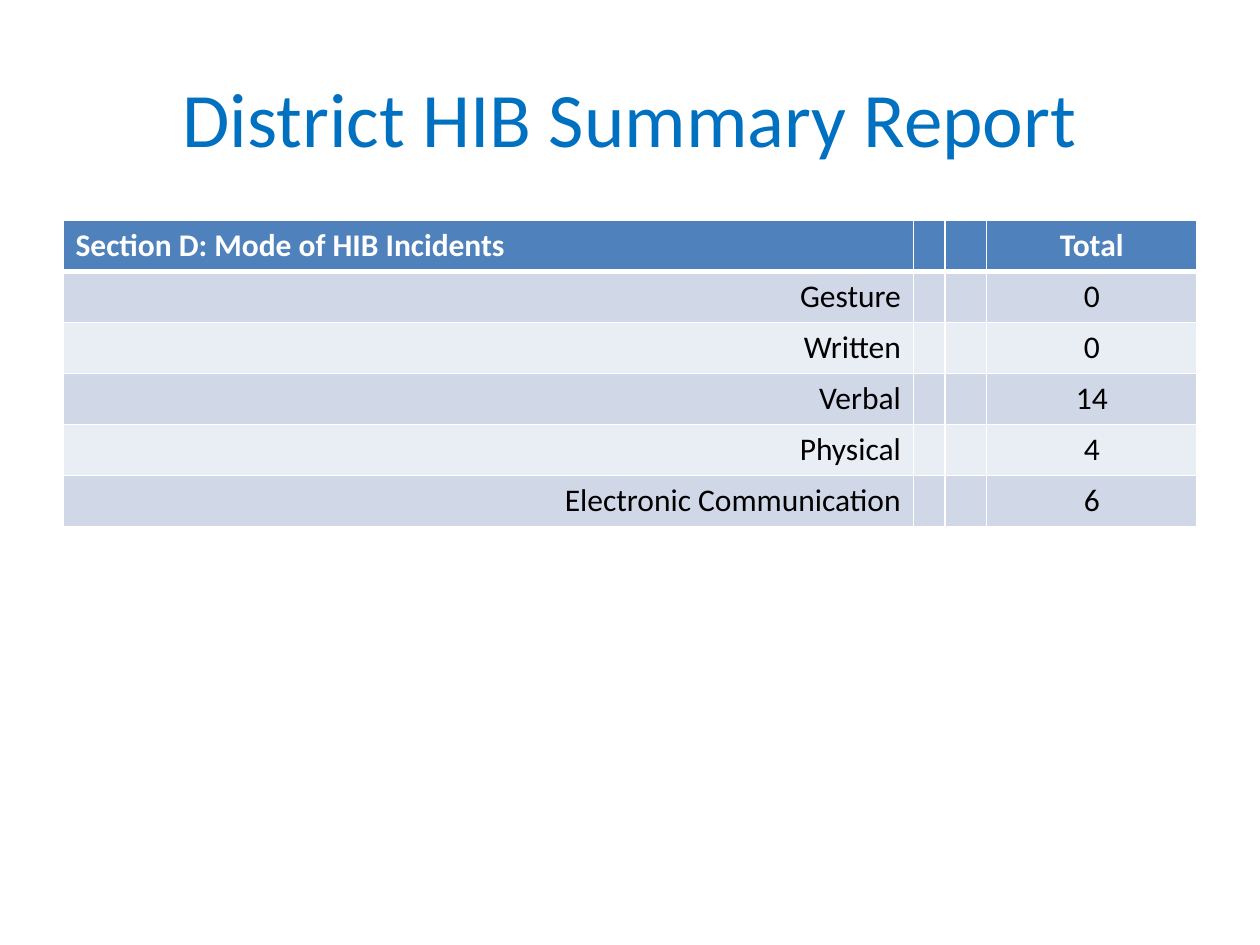
import dataclasses

import pptx
import pptx.dml.color
import pptx.enum.text
import pptx.oxml
import pptx.oxml.ns
import pptx.util
from pptx.util import Inches

ALIGN = pptx.enum.text.PP_ALIGN
MIDDLE = pptx.enum.text.MSO_ANCHOR.MIDDLE


@dataclasses.dataclass(frozen=True)
class Theme:
    font: str = "Calibri"
    title: str = "0070C0"
    head: str = "4F81BD"
    bands: tuple = ("D0D8E8", "E9EDF4")
    light: str = "FFFFFF"
    dark: str = "000000"
    big: int = 44
    body: int = 18
    thin: int = 1
    thick: int = 3


THEME = Theme()
WIDTHS = (6.75, 0.25, 0.33, 1.67)
HEIGHT = 0.405
HEADS = ("Section D: Mode of HIB Incidents", "Total")
MODES = (
    ("Gesture", 0),
    ("Written", 0),
    ("Verbal", 14),
    ("Physical", 4),
    ("Electronic Communication", 6),
)


def rgb(code):
    return pptx.dml.color.RGBColor.from_string(code)


def write(frame, text, size, color, align, bold=False):
    para = frame.paragraphs[0]
    para.text = text
    para.alignment = align
    font = para.font
    font.name = THEME.font
    font.size = pptx.util.Pt(size)
    font.bold = bold
    font.color.rgb = rgb(color)


def add_title(slide, text):
    box = slide.shapes.add_textbox(Inches(0.5), Inches(0.3), Inches(9), Inches(1.25))
    frame = box.text_frame
    frame.word_wrap = True
    frame.vertical_anchor = MIDDLE
    write(frame, text, THEME.big, THEME.title, ALIGN.CENTER)


def add_edge(cell, side, width):
    """Draw one cell border; call before filling, as the schema orders them so."""
    line = pptx.oxml.parse_xml(
        f'<a:ln{side} {pptx.oxml.ns.nsdecls("a")} w="{pptx.util.Pt(width)}">'
        f'<a:solidFill><a:srgbClr val="{THEME.light}"/></a:solidFill></a:ln{side}>'
    )
    cell._tc.get_or_add_tcPr().append(line)


def style_cell(cell, fill, top, bottom):
    for side, width in zip("LRTB", (THEME.thin, THEME.thin, top, bottom)):
        add_edge(cell, side, width)
    cell.fill.solid()
    cell.fill.fore_color.rgb = rgb(fill)


def add_table(slide, heads, modes):
    rows = [heads, *modes]
    table = slide.shapes.add_table(
        len(rows), len(WIDTHS), Inches(0.5), Inches(1.75),
        Inches(sum(WIDTHS)), Inches(HEIGHT * len(rows)),
    ).table
    for col, width in zip(table.columns, WIDTHS):
        col.width = Inches(width)
    for i, (label, total) in enumerate(rows):
        head = i == 0
        table.rows[i].height = Inches(HEIGHT)
        fill = THEME.head if head else THEME.bands[(i - 1) % 2]
        color = THEME.light if head else THEME.dark
        top = THEME.thick if i == 1 else THEME.thin
        bottom = THEME.thick if head else THEME.thin
        sides = (ALIGN.LEFT if head else ALIGN.RIGHT, None, None, ALIGN.CENTER)
        texts = (label, "", "", str(total))
        for cell, text, align in zip(table.rows[i].cells, texts, sides):
            style_cell(cell, fill, top, bottom)
            write(cell.text_frame, text, THEME.body, color, align, head)


def main():
    deck = pptx.Presentation()
    deck.slide_width, deck.slide_height = Inches(10), Inches(7.5)
    slide = deck.slides.add_slide(deck.slide_layouts[6])
    add_title(slide, "District HIB Summary Report")
    add_table(slide, HEADS, MODES)
    deck.save("out.pptx")


if __name__ == "__main__":
    main()
